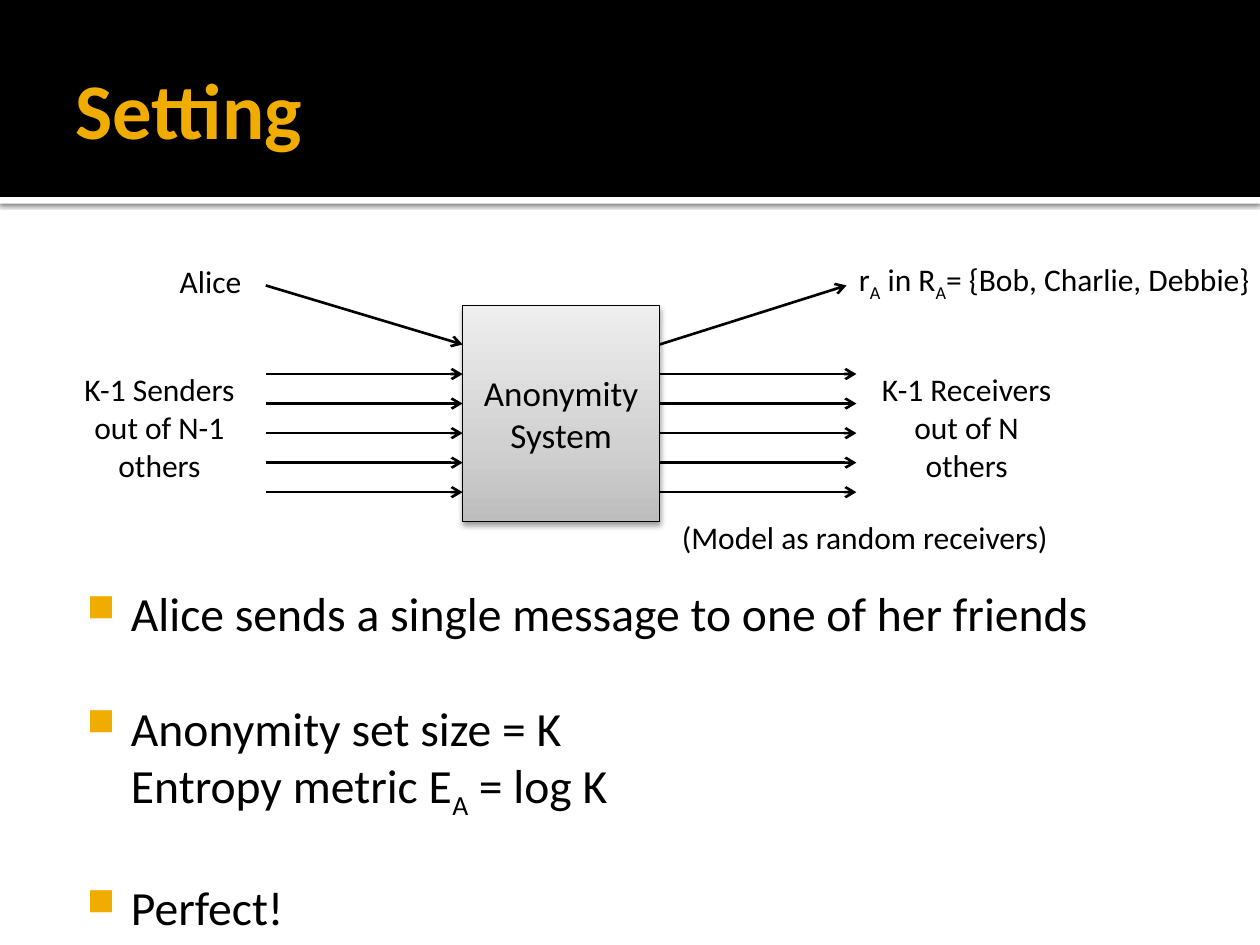
from dataclasses import dataclass

from lxml import etree
from pptx import Presentation
from pptx.dml.color import RGBColor
from pptx.enum.shapes import MSO_CONNECTOR, MSO_SHAPE
from pptx.enum.text import MSO_ANCHOR, MSO_AUTO_SIZE, PP_ALIGN
from pptx.oxml import parse_xml
from pptx.oxml.ns import nsdecls, qn
from pptx.util import Inches, Pt

BLACK = RGBColor(0x00, 0x00, 0x00)
WHITE = RGBColor(0xFF, 0xFF, 0xFF)
AMBER = RGBColor(0xF0, 0xAD, 0x00)
BOX_GRADIENT = (
    (0, RGBColor(0xBD, 0xBD, 0xBD)),
    (35, RGBColor(0xD1, 0xD1, 0xD1)),
    (100, RGBColor(0xEE, 0xEE, 0xEE)),
)
FONT = "Calibri"
RECTANGLE = MSO_SHAPE.RECTANGLE
STRAIGHT = MSO_CONNECTOR.STRAIGHT
LEFT, CENTER = PP_ALIGN.LEFT, PP_ALIGN.CENTER
TOP, MIDDLE = MSO_ANCHOR.TOP, MSO_ANCHOR.MIDDLE
FIT_SHAPE = MSO_AUTO_SIZE.SHAPE_TO_FIT_TEXT

# The slide is a grid of 64 columns by 48 rows of square cells.
COLUMNS, ROWS = 64, 48
CELL = 10 / COLUMNS

SENDER_COLUMN, BOX_LEFT, BOX_RIGHT, RECEIVER_COLUMN = 13.5, 23.5, 33.5, 43.5
BOX_TOP, BOX_BOTTOM = 15.5, 26.5
FIRST_ARROW_ROW, ARROW_STEP, ARROW_COUNT = 19, 1.5, 5


@dataclass(frozen=True)
class Area:
    column: float
    row: float
    columns: float
    rows: float

    def lengths(self) -> tuple:
        return tuple(cells(n) for n in (self.column, self.row, self.columns, self.rows))


@dataclass(frozen=True)
class Label:
    text: str
    area: Area
    alignment: PP_ALIGN = LEFT


@dataclass(frozen=True)
class Arrow:
    start: tuple
    end: tuple


LABELS = (
    Label("Alice", Area(8.5, 13, 4.5, 2.6)),
    Label("K-1 Senders\nout of N-1\nothers", Area(3.5, 18.5, 9.2, 6.5), CENTER),
    Label("K-1 Receivers\nout of N\nothers", Area(44, 18.5, 10.2, 6.5), CENTER),
    Label("r~A~ in R~A~= {Bob, Charlie, Debbie}", Area(43, 12.9, 22.1, 2.6)),
    Label("(Model as random receivers)", Area(34, 26, 20.2, 2.6)),
)
BULLETS = (
    "Alice sends a single message to one of her friends",
    "Anonymity set size = K\nEntropy metric E~A~ = log K",
    "Perfect!",
)


def cells(count: float) -> int:
    return Inches(count * CELL)


def write(paragraph, text: str, size: float, color=BLACK, bold=False) -> None:
    """Fill a paragraph; text between tildes becomes subscript."""
    paragraph.font.size = Pt(size)
    for index, part in enumerate(text.split("~")):
        for line_number, line in enumerate(part.split("\n")):
            if line_number:
                paragraph.add_line_break()
            run = paragraph.add_run()
            run.text = line
            font = run.font
            font.name, font.size, font.bold = FONT, Pt(size), bold
            font.color.rgb = color
            if index % 2:
                run._r.get_or_add_rPr().set("baseline", "-25000")


def add_text_frame(slide, area: Area, insets=(0.1, 0.05, 0.1, 0.05), anchor=TOP):
    frame = slide.shapes.add_textbox(*area.lengths()).text_frame
    frame.word_wrap = True
    frame.vertical_anchor = anchor
    (frame.margin_left, frame.margin_top,
     frame.margin_right, frame.margin_bottom) = map(Inches, insets)
    return frame


def add_label(slide, label: Label) -> None:
    frame = add_text_frame(slide, label.area)
    frame.word_wrap = False
    frame.auto_size = FIT_SHAPE
    paragraph = frame.paragraphs[0]
    paragraph.alignment = label.alignment
    write(paragraph, label.text, 18)


def add_rectangle(slide, area: Area, color: RGBColor):
    shape = slide.shapes.add_shape(RECTANGLE, *area.lengths())
    shape.fill.solid()
    shape.fill.fore_color.rgb = color
    shape.line.fill.background()
    shape.shadow.inherit = False
    return shape


def add_shadow(shape, opacity: int, blur: float, distance: float) -> None:
    shape._element.spPr.find(qn("a:effectLst")).append(parse_xml(
        f'<a:outerShdw {nsdecls("a")} blurRad="{Pt(blur)}" dist="{Pt(distance)}" '
        f'dir="5400000" rotWithShape="0"><a:srgbClr val="{BLACK}">'
        f'<a:alpha val="{opacity * 1000}"/></a:srgbClr></a:outerShdw>'))


def set_gradient(shape, stops: tuple) -> None:
    """Replace the solid fill by a gradient that runs from bottom to top."""
    stop_xml = "".join(
        f'<a:gs pos="{position * 1000}"><a:srgbClr val="{color}"/></a:gs>'
        for position, color in stops)
    properties = shape._element.spPr
    properties.replace(properties.find(qn("a:solidFill")), parse_xml(
        f'<a:gradFill {nsdecls("a")} rotWithShape="1"><a:gsLst>{stop_xml}</a:gsLst>'
        '<a:lin ang="16200000" scaled="0"/></a:gradFill>'))


def add_arrow(slide, arrow: Arrow) -> None:
    points = (cells(value) for value in arrow.start + arrow.end)
    connector = slide.shapes.add_connector(STRAIGHT, *points)
    connector.line.color.rgb = BLACK
    connector.line.width = Pt(1.5)
    properties = connector._element.spPr
    etree.SubElement(properties.find(qn("a:ln")), qn("a:tailEnd"), type="arrow")
    etree.SubElement(properties, qn("a:effectLst"))


def add_header(slide) -> None:
    stripe = add_rectangle(slide, Area(0, 10, COLUMNS, 0.35), WHITE)
    add_shadow(stripe, opacity=60, blur=2.5, distance=0.8)
    add_rectangle(slide, Area(0, 0, COLUMNS, 10), BLACK)
    frame = add_text_frame(slide, Area(3.2, 1.1, 57.6, 8.8), (0.1, 0.05, 0.05, 0.05), MIDDLE)
    write(frame.paragraphs[0], "Setting", 45, AMBER, bold=True)


def add_bullets(slide) -> None:
    frame = add_text_frame(slide, Area(3.2, 29, 57.6, 15.8), (0.06, 0.1, 0.1, 0.05))
    for index, text in enumerate(BULLETS):
        paragraph = frame.add_paragraph() if index else frame.paragraphs[0]
        write(paragraph, text, 27.2)
        paragraph.space_after = Pt(33)
        properties = paragraph._p.get_or_add_pPr()
        properties.set("marL", str(Inches(0.48)))
        properties.set("indent", str(Inches(-0.35)))
        bullet_parts = (
            f'<a:buClr {nsdecls("a")}><a:srgbClr val="{AMBER}"/></a:buClr>',
            f'<a:buSzPct {nsdecls("a")} val="80000"/>',
            f'<a:buChar {nsdecls("a")} char="■"/>',
        )
        default_run = properties.find(qn("a:defRPr"))
        for part in bullet_parts:
            default_run.addprevious(parse_xml(part))


def add_system_box(slide) -> None:
    area = Area(BOX_LEFT, BOX_TOP, BOX_RIGHT - BOX_LEFT, BOX_BOTTOM - BOX_TOP)
    box = add_rectangle(slide, area, WHITE)
    set_gradient(box, BOX_GRADIENT)
    box.line.color.rgb = BLACK
    box.line.width = Pt(0.5)
    add_shadow(box, opacity=38, blur=3.5, distance=2)
    frame = box.text_frame
    frame.vertical_anchor = MIDDLE
    for paragraph, text in ((frame.paragraphs[0], "Anonymity"), (frame.add_paragraph(), "System")):
        paragraph.alignment = CENTER
        write(paragraph, text, 20)


def main() -> None:
    presentation = Presentation()
    presentation.slide_width, presentation.slide_height = cells(COLUMNS), cells(ROWS)
    slide = presentation.slides.add_slide(presentation.slide_layouts[6])
    add_header(slide)
    add_bullets(slide)
    add_arrow(slide, Arrow((SENDER_COLUMN, 14.5), (BOX_LEFT, 17.5)))
    add_arrow(slide, Arrow((BOX_RIGHT, 17.5), (43, 14.5)))
    for start, end in ((SENDER_COLUMN, BOX_LEFT), (BOX_RIGHT, RECEIVER_COLUMN)):
        for index in range(ARROW_COUNT):
            row = FIRST_ARROW_ROW + index * ARROW_STEP
            add_arrow(slide, Arrow((start, row), (end, row)))
    add_system_box(slide)
    for label in LABELS:
        add_label(slide, label)
    presentation.save("out.pptx")


if __name__ == "__main__":
    main()
